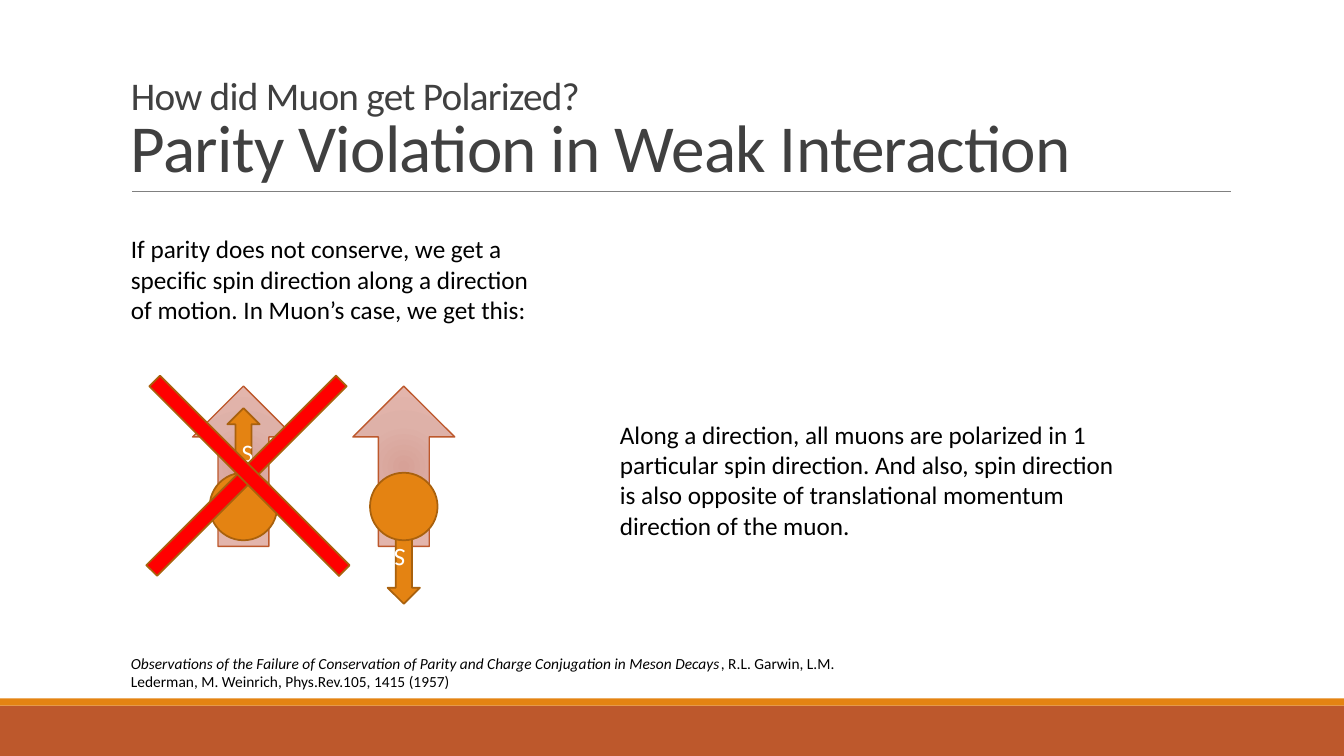
from lxml import etree
from pptx import Presentation
from pptx.dml.color import RGBColor
from pptx.enum.shapes import MSO_CONNECTOR, MSO_SHAPE
from pptx.enum.text import MSO_ANCHOR, PP_ALIGN
from pptx.oxml import parse_xml
from pptx.oxml.ns import nsdecls, qn
from pptx.util import Inches, Pt

FONT = "Calibri"
BLACK = RGBColor(0x00, 0x00, 0x00)
WHITE = RGBColor(0xFF, 0xFF, 0xFF)
TITLE_GREY = RGBColor(0x40, 0x40, 0x40)
RULE_GREY = RGBColor(0x80, 0x80, 0x80)
RUST = RGBColor(0xBD, 0x58, 0x2C)
ORANGE = RGBColor(0xE4, 0x83, 0x12)
BROWN = RGBColor(0xA9, 0x61, 0x0D)
RED = RGBColor(0xFF, 0x00, 0x00)
MOMENTUM_STOPS = [
    (0, RGBColor(0xD7, 0xA1, 0x97)),
    (45, RGBColor(0xDE, 0xB1, 0xA8)),
    (100, RGBColor(0xE6, 0xB7, 0xAE)),
]


def style_font(font, size, color):
    font.name = FONT
    font.size = Pt(size)
    font.color.rgb = color


def add_shape(slide, kind, left, top, width, height, fill=None, line=None, weight=1.25):
    shape = slide.shapes.add_shape(
        kind, Inches(left), Inches(top), Inches(width), Inches(height))
    shape.shadow.inherit = False
    if fill is None:
        shape.fill.background()
    else:
        shape.fill.solid()
        shape.fill.fore_color.rgb = fill
    if line is None:
        shape.line.fill.background()
    else:
        shape.line.color.rgb = line
        shape.line.width = Pt(weight)
    return shape


def add_text(slide, text, left, top, width, height, size=18, color=BLACK):
    box = slide.shapes.add_textbox(
        Inches(left), Inches(top), Inches(width), Inches(height))
    frame = box.text_frame
    frame.word_wrap = True
    frame.text = text
    for run in frame.paragraphs[0].runs:
        style_font(run.font, size, color)
    return frame


def fill_radial(shape, stops):
    """Replace the empty fill of a shape with a circular gradient."""
    stop_xml = "".join(
        f'<a:gs pos="{pos * 1000}"><a:srgbClr val="{color}"/></a:gs>'
        for pos, color in stops)
    gradient = parse_xml(
        f'<a:gradFill {nsdecls("a")} rotWithShape="1"><a:gsLst>{stop_xml}</a:gsLst>'
        '<a:path path="circle"><a:fillToRect l="100000" t="100000" r="100000" b="100000"/>'
        '</a:path></a:gradFill>')
    properties = shape.element.spPr
    properties.replace(properties.find(qn("a:noFill")), gradient)


def add_footer_bands(slide, top, width):
    add_shape(slide, MSO_SHAPE.RECTANGLE, 0, top + 0.07, width, 0.5, RUST)
    add_shape(slide, MSO_SHAPE.RECTANGLE, 0, top, width, 0.07, ORANGE)


def add_title(slide, left, top, width, height):
    # Rule under the title
    rule_y = Inches(top + height)
    rule = slide.shapes.add_connector(
        MSO_CONNECTOR.STRAIGHT, Inches(left + 0.11), rule_y,
        Inches(left + width + 0.01), rule_y)
    rule.line.color.rgb = RULE_GREY
    rule.line.width = Pt(0.5)
    etree.SubElement(rule.element.spPr, qn("a:effectLst"))

    # Question above the main heading
    frame = add_text(
        slide, "How did Muon get Polarized?\vParity Violation in Weak Interaction",
        left, top, width, height, color=TITLE_GREY)
    frame.vertical_anchor = MSO_ANCHOR.BOTTOM
    heading = frame.paragraphs[0]
    heading.line_spacing = 0.85
    for run, size in zip(heading.runs, (28, 48)):
        run.font.size = Pt(size)
        run.font._element.set("spc", "-50")


def add_muon(slide, left, top, spin_up):
    # Momentum arrow
    width = 1.01
    momentum = add_shape(slide, MSO_SHAPE.UP_ARROW, left, top, width, 1.59,
                         line=RUST, weight=1)
    fill_radial(momentum, MOMENTUM_STOPS)

    # Spin arrow, behind the particle
    spin_width = 0.32
    spin_top = top + (0.22 if spin_up else 1.36)
    spin = add_shape(slide, MSO_SHAPE.UP_ARROW, left + (width - spin_width) / 2,
                     spin_top, spin_width, 0.8, ORANGE, BROWN)
    spin.rotation = 0 if spin_up else 180
    spin.text_frame.text = "S"
    spin.text_frame.vertical_anchor = MSO_ANCHOR.MIDDLE
    label = spin.text_frame.paragraphs[0]
    label.alignment = PP_ALIGN.CENTER
    style_font(label.runs[0].font, 18, WHITE)

    # Particle
    diameter = 0.67
    add_shape(slide, MSO_SHAPE.OVAL, left + (width - diameter) / 2, top + 0.86,
              diameter, diameter, ORANGE, BROWN)


def add_cross(slide, left, top, height):
    for offset, angle in ((0, 45), (0.03, 315)):
        bar = add_shape(slide, MSO_SHAPE.RECTANGLE, left + offset, top, 0.15, height,
                        RED, BROWN)
        bar.rotation = angle


def add_citation(slide, left, top, width, height):
    frame = add_text(
        slide,
        "Observations of the Failure of Conservation of Parity and Charge "
        "Conjugation in Meson Decays",
        left, top, width, height, size=11)
    paper = frame.paragraphs[0]
    paper.runs[0].font.italic = True
    authors = paper.add_run()
    authors.text = ", R.L. Garwin, L.M. Lederman, M. Weinrich, Phys.Rev.105, 1415 (1957)"
    style_font(authors.font, 11, BLACK)


def main():
    prs = Presentation()
    prs.slide_width = Inches(13.33)
    prs.slide_height = Inches(7.5)
    slide = prs.slides.add_slide(prs.slide_layouts[6])

    margin = 1.2
    add_footer_bands(slide, 6.93, 13.33)
    add_title(slide, margin, 0.31, 11, 1.59)
    add_text(slide,
             "If parity does not conserve, we get a specific spin direction along a "
             "direction of motion. In Muon’s case, we get this:",
             margin, 2.27, 4.4, 1.01)

    # Forbidden spin is crossed out, allowed spin stands beside it
    add_muon(slide, 1.91, 3.83, spin_up=True)
    add_muon(slide, 3.5, 3.83, spin_up=False)
    add_cross(slide, 2.37, 3.39, 2.66)

    add_text(slide,
             "Along a direction, all muons are polarized in 1 particular spin direction. "
             "And also, spin direction is also opposite of translational momentum "
             "direction of the muon.",
             6.05, 4.11, 5.19, 1.31)
    add_citation(slide, margin, 6.44, 7.45, 0.47)
    prs.save("out.pptx")


if __name__ == "__main__":
    main()
